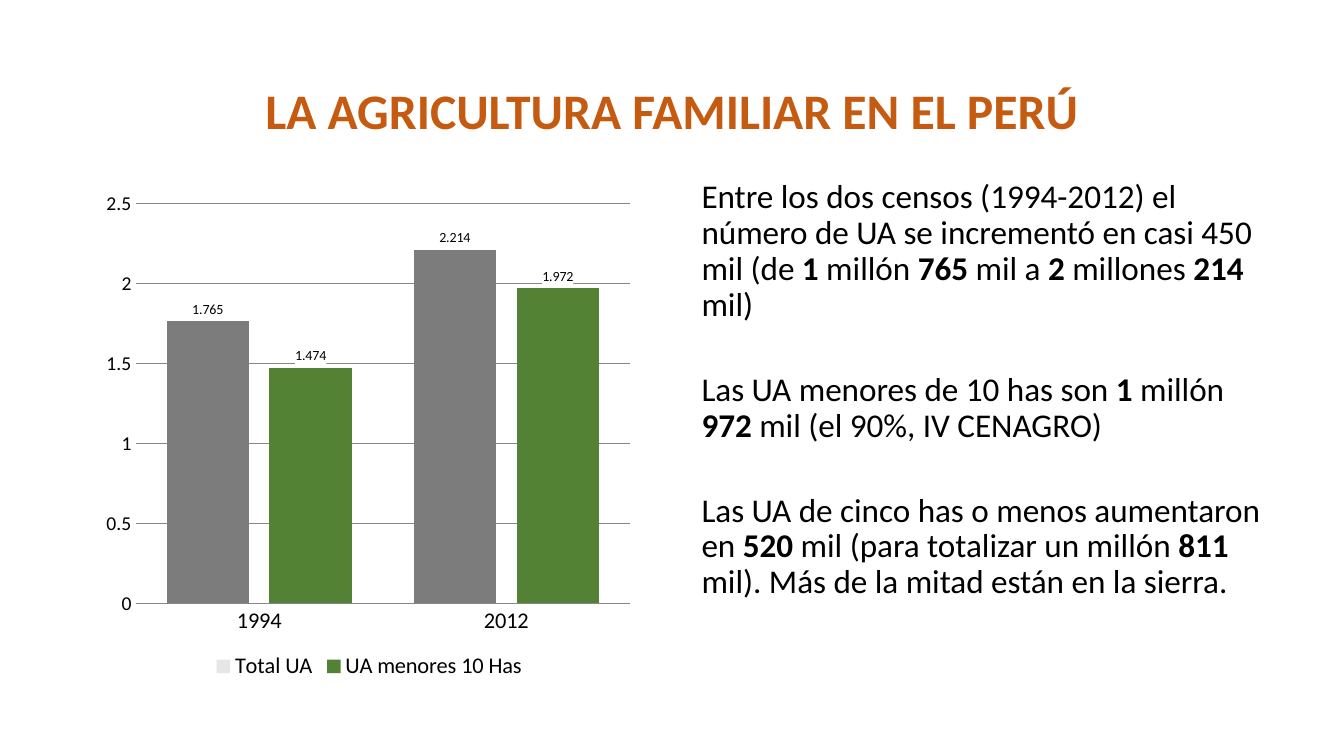
import dataclasses

import pptx
import pptx.chart.data
import pptx.dml.color
import pptx.enum.chart
import pptx.enum.text
import pptx.oxml
import pptx.oxml.ns
import pptx.util

Cm = pptx.util.Cm
Pt = pptx.util.Pt
RGB = pptx.dml.color.RGBColor.from_string
ALIGN = pptx.enum.text.PP_ALIGN
ANCHOR = pptx.enum.text.MSO_ANCHOR
CHART = pptx.enum.chart


@dataclasses.dataclass(frozen=True)
class Theme:
    font: str = "Calibri"
    title: str = "C55A11"
    ink: str = "000000"
    grid: str = "868686"
    total: str = "7C7C7C"
    pale: str = "E7E6E6"
    small: str = "548235"
    paper: str = "FFFFFF"
    head_size: float = 35.5
    body_size: float = 23.7
    cat_size: float = 16
    val_size: float = 14
    label_size: float = 10


THEME = Theme()

TITLE = "LA AGRICULTURA FAMILIAR EN EL PERÚ"
FACTS = [
    "Entre los dos censos (1994-2012) el número de UA se incrementó en casi 450 mil "
    "(de *1* millón *765 *mil a *2* millones *214* mil)",
    "Las UA menores de 10 has son *1* millón *972* mil (el 90%, IV CENAGRO)",
    "Las UA de cinco has o menos aumentaron en *520 *mil "
    "(para totalizar un millón *811 *mil). Más de la mitad están en la sierra.",
]
YEARS = ["1994", "2012"]
TOTAL = ("Total UA", [1.765, 2.214])
SMALL = ("UA menores 10 Has", [1.474, 1.972])


def style(font, size, color=THEME.ink, bold=False):
    font.name = THEME.font
    font.size = Pt(size)
    font.bold = bold
    font.color.rgb = RGB(color)


def paint(fill, color):
    fill.solid()
    fill.fore_color.rgb = RGB(color)


def place(shape, left, top, width, height):
    shape.left, shape.top = Cm(left), Cm(top)
    shape.width, shape.height = Cm(width), Cm(height)


def write(frame, texts, size, color=THEME.ink, bold=False, align=ALIGN.LEFT,
          anchor=ANCHOR.TOP, gap=0):
    """Fill a frame, one paragraph a text; parts between asterisks are bold."""
    frame.word_wrap = True
    frame.auto_size = pptx.enum.text.MSO_AUTO_SIZE.NONE
    frame.vertical_anchor = anchor
    for i, text in enumerate(texts):
        para = frame.add_paragraph() if i else frame.paragraphs[0]
        para.alignment = align
        para.line_spacing = 0.9
        para.space_before = Pt(gap if i else 0)
        for j, part in enumerate(text.split("*")):
            if part:
                run = para.add_run()
                run.text = part
                style(run.font, size, color, bold or j % 2 == 1)


def label(series):
    labels = series.data_labels
    labels.show_value = True
    labels.position = CHART.XL_LABEL_POSITION.OUTSIDE_END
    style(labels.font, THEME.label_size)
    back = pptx.oxml.parse_xml(
        f'<c:spPr {pptx.oxml.ns.nsdecls("c", "a")}><a:solidFill>'
        f'<a:srgbClr val="{THEME.paper}"/></a:solidFill></c:spPr>')
    labels._element.find(pptx.oxml.ns.qn("c:txPr")).addprevious(back)


def fit(chart, **box):
    """Set the inner plot area, in shares of the chart's size."""
    sides = "".join(f'<c:{key} val="{val}"/>' for key, val in box.items())
    plan = pptx.oxml.parse_xml(
        f'<c:layout {pptx.oxml.ns.nsdecls("c")}><c:manualLayout>'
        '<c:layoutTarget val="inner"/><c:xMode val="edge"/><c:yMode val="edge"/>'
        f'{sides}</c:manualLayout></c:layout>')
    area = chart._chartSpace.chart.plotArea
    for old in area.findall(pptx.oxml.ns.qn("c:layout")):
        area.remove(old)
    area.insert(0, plan)


def scale(axis, size):
    axis.major_tick_mark = axis.minor_tick_mark = CHART.XL_TICK_MARK.NONE
    style(axis.tick_labels.font, size)


def bars(slide, left, top, width, height):
    data = pptx.chart.data.CategoryChartData()
    data.categories = YEARS
    for name, values in (TOTAL, SMALL):
        data.add_series(name, values)
    chart = slide.shapes.add_chart(
        CHART.XL_CHART_TYPE.COLUMN_CLUSTERED,
        Cm(left), Cm(top), Cm(width), Cm(height), data).chart
    style(chart.font, THEME.label_size)
    chart.has_title = False
    chart.has_legend = True
    chart.legend.position = CHART.XL_LEGEND_POSITION.BOTTOM
    chart.legend.include_in_layout = False
    style(chart.legend.font, THEME.cat_size)

    plot = chart.plots[0]
    plot.vary_by_categories = False
    plot.gap_width, plot.overlap = 75, -25
    for series, color in zip(plot.series, (THEME.pale, THEME.small)):
        paint(series.format.fill, color)
        label(series)
    for i in range(len(YEARS)):
        paint(plot.series[0].points[i].format.fill, THEME.total)

    scale(chart.category_axis, THEME.cat_size)
    chart.category_axis.format.line.color.rgb = RGB(THEME.grid)
    axis = chart.value_axis
    scale(axis, THEME.val_size)
    axis.minimum_scale, axis.maximum_scale, axis.major_unit = 0, 2.5, 0.5
    axis.format.line.fill.background()
    axis.major_gridlines.format.line.color.rgb = RGB(THEME.grid)
    fit(chart, x=0.07, y=0.05, w=0.91, h=0.79)


def main():
    deck = pptx.Presentation()
    deck.slide_width, deck.slide_height = Cm(33.87), Cm(19.05)
    slide = deck.slides.add_slide(deck.slide_layouts[5])

    title = slide.shapes.title
    place(title, 2.34, 1.02, 29.21, 3.68)
    write(title.text_frame, [TITLE], THEME.head_size, THEME.title, bold=True,
          align=ALIGN.CENTER, anchor=ANCHOR.MIDDLE)

    bars(slide, 2.46, 4.5, 13.69, 12.75)

    body = slide.shapes.add_textbox(Cm(16.94), Cm(4.42), Cm(15.27), Cm(12.75))
    body.text_frame.margin_left = Cm(0.74)
    write(body.text_frame, FACTS, THEME.body_size, gap=35)

    deck.save("out.pptx")


if __name__ == "__main__":
    main()
